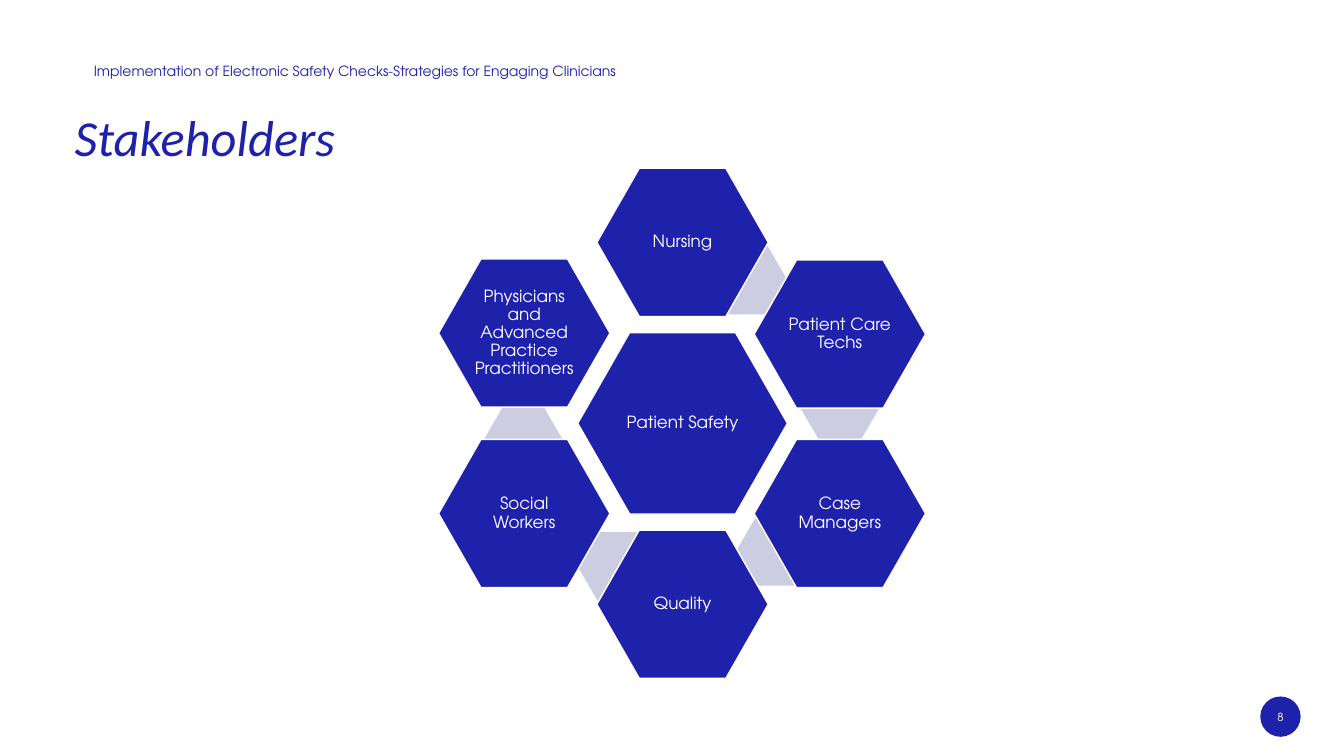
from pptx import Presentation
from pptx.dml.color import RGBColor
from pptx.enum.shapes import MSO_SHAPE
from pptx.enum.text import MSO_ANCHOR, PP_ALIGN
from pptx.util import Inches, Pt

COLORS = {"blue": "1E22AA", "lilac": "CDCDE2", "white": "FFFFFF"}
BODY_FONT = "TeX Gyre Adventor"

prs = Presentation()
prs.slide_width, prs.slide_height = Inches(13.33), Inches(7.5)
s = prs.slides.add_slide(prs.slide_layouts[6])


def add_shape(kind, x, y, w, h, fill, line=None):
    sp = s.shapes.add_shape(kind, Inches(x), Inches(y), Inches(w), Inches(h))
    sp.shadow.inherit = False
    sp.fill.solid()
    sp.fill.fore_color.rgb = RGBColor.from_string(COLORS[fill])
    if line:
        sp.line.color.rgb = RGBColor.from_string(COLORS[line])
        sp.line.width = Pt(1)
    else:
        sp.line.fill.background()
    return sp


def set_text(sp, text, size, color, font=BODY_FONT, align=PP_ALIGN.LEFT,
             anchor=MSO_ANCHOR.TOP, spacing=1.0, inset=0):
    tf = sp.text_frame
    tf.word_wrap = True
    tf.vertical_anchor = anchor
    tf.margin_left = tf.margin_right = Inches(inset)
    tf.margin_top = tf.margin_bottom = Inches(inset)
    p = tf.paragraphs[0]
    p.text = text
    p.alignment = align
    p.line_spacing = spacing
    p.font.name = font
    p.font.size = Pt(size)
    p.font.color.rgb = RGBColor.from_string(COLORS[color])
    return p


header = s.shapes.add_textbox(Inches(0.93), Inches(0.66), Inches(6.02), Inches(0.23))
set_text(header, "Implementation of Electronic Safety Checks-Strategies for Engaging Clinicians",
         10, "blue", spacing=0.75)

title = s.shapes.add_textbox(Inches(0.74), Inches(1.19), Inches(10.75), Inches(0.61))
p = set_text(title, "Stakeholders", 36, "blue", font="Calibri", spacing=0.75)
p.font.italic = True

LEFT, MIDDLE, RIGHT = 4.35, 5.92, 7.48
RING_SIZE = (1.7, 1.47)
LINK_SIZE = (0.78, 0.68)
hexagons = [
    ("Patient Safety", (5.73, 3.3), (2.08, 1.8), None),
    ("Nursing", (MIDDLE, 1.67), RING_SIZE, (7.03, 2.44)),
    ("Patient Care Techs", (RIGHT, 2.58), RING_SIZE, (7.94, 3.71)),
    ("Case Managers", (RIGHT, 4.36), RING_SIZE, (7.3, 5.13)),
    ("Quality", (MIDDLE, 5.26), RING_SIZE, (5.73, 5.28)),
    ("Social Workers", (LEFT, 4.36), RING_SIZE, (4.8, 4.02)),
    ("Physicians and Advanced Practice Practitioners", (LEFT, 2.57), RING_SIZE, None),
]
for label, position, size, link in hexagons:
    if link:
        sp = add_shape(MSO_SHAPE.HEXAGON, *link, *LINK_SIZE, "lilac")
        sp.adjustments[0] = 0.289
    sp = add_shape(MSO_SHAPE.HEXAGON, *position, *size, "blue", line="white")
    sp.adjustments[0] = 0.286
    p = set_text(sp, label, 12, "white", align=PP_ALIGN.CENTER,
                 anchor=MSO_ANCHOR.MIDDLE, spacing=0.9, inset=0.02)
    p.space_after = Pt(4.2)

badge = add_shape(MSO_SHAPE.OVAL, 12.5, 6.91, 0.4, 0.4, "blue")
set_text(badge, "8", 8, "white", align=PP_ALIGN.CENTER, anchor=MSO_ANCHOR.MIDDLE)

prs.save("out.pptx")
